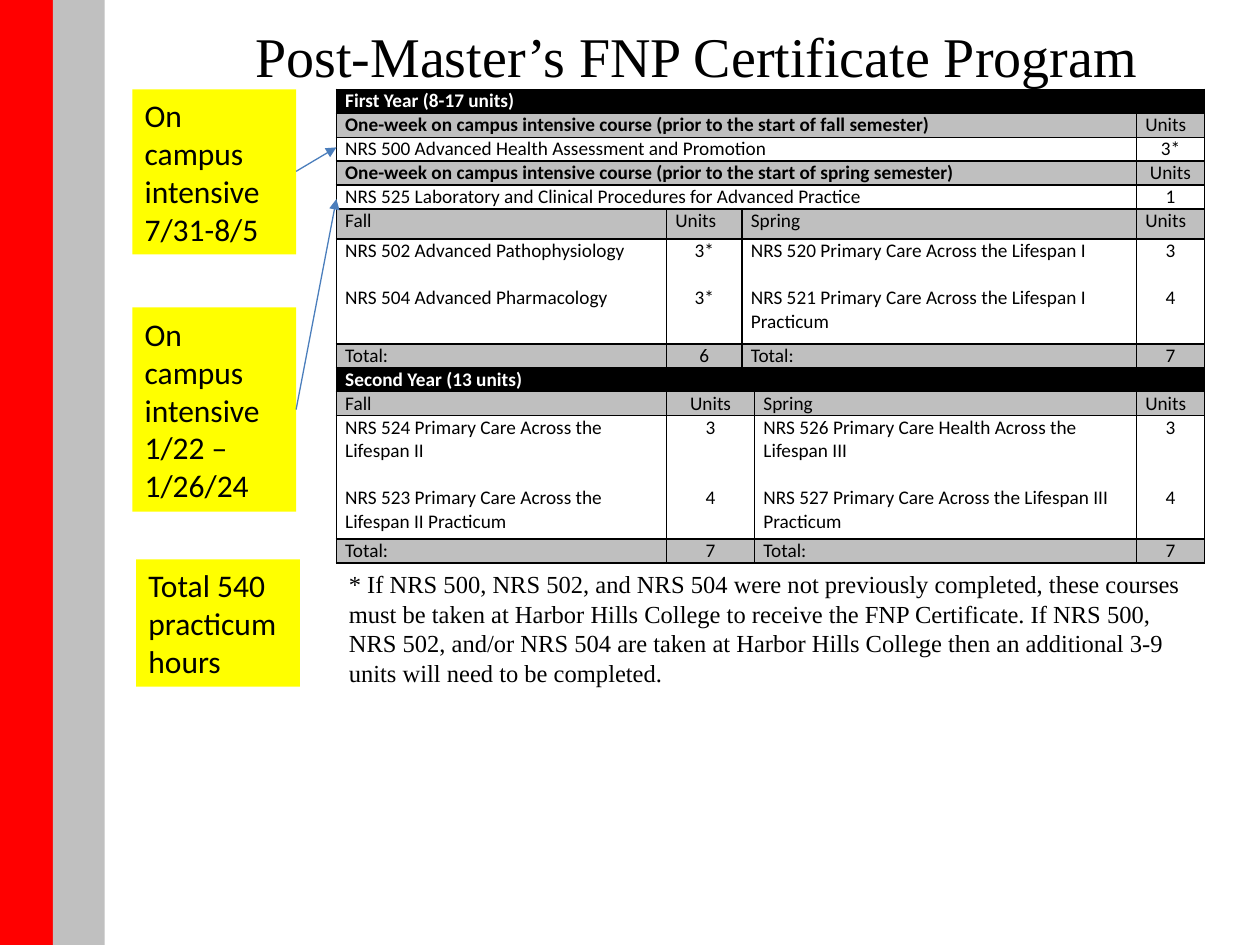
from lxml import etree
from pptx import Presentation
from pptx.dml.color import RGBColor
from pptx.enum.shapes import MSO_CONNECTOR, MSO_SHAPE
from pptx.enum.text import MSO_ANCHOR, PP_ALIGN
from pptx.oxml import parse_xml
from pptx.oxml.ns import nsdecls, qn
from pptx.util import Inches, Pt

RED = RGBColor(0xFF, 0x00, 0x00)
SILVER = RGBColor(0xC0, 0xC0, 0xC0)
YELLOW = RGBColor(0xFF, 0xFF, 0x00)
BLACK = RGBColor(0x00, 0x00, 0x00)
WHITE = RGBColor(0xFF, 0xFF, 0xFF)
GRAY = RGBColor(0xBF, 0xBF, 0xBF)
BLUE = RGBColor(0x4B, 0x7E, 0xBC)
LEFT, CENTER = PP_ALIGN.LEFT, PP_ALIGN.CENTER
LINE = 13.4  # height of one table text line in points


def format_text(frame, size, font, color, align=LEFT, bold=False):
    for paragraph in frame.paragraphs:
        paragraph.alignment = align
        for run in paragraph.runs:
            run.font.size = Pt(size)
            run.font.name = font
            run.font.bold = bold
            run.font.color.rgb = color


def add_block(left, top, width, height, color):
    block = slide.shapes.add_shape(
        MSO_SHAPE.RECTANGLE, Inches(left), Inches(top), Inches(width), Inches(height))
    block.shadow.inherit = False
    block.fill.solid()
    block.fill.fore_color.rgb = color
    block.line.fill.background()
    return block


prs = Presentation()
prs.slide_width, prs.slide_height = Inches(10), Inches(7.5)
slide = prs.slides.add_slide(prs.slide_layouts[5])

# Side stripes
add_block(0, 0, 0.42, 7.5, RED)
add_block(0.42, 0, 0.41, 7.5, SILVER)

# Title
title = slide.shapes.title
title.left, title.top = Inches(1.83), Inches(0.17)
title.width, title.height = Inches(7.4), Inches(0.54)
title_frame = title.text_frame
title_frame.text = "Post-Master’s FNP Certificate Program"
title_frame.margin_left = title_frame.margin_right = 0
title_frame.margin_top = title_frame.margin_bottom = 0
format_text(title_frame, 32, "Times New Roman", BLACK, CENTER)

# Yellow callouts
callouts = [
    (1.05, 0.71, 1.31, "On campus intensive 7/31-8/5"),
    (1.05, 2.44, 1.62, "On campus intensive 1/22 – 1/26/24"),
    (1.08, 4.44, 1.01, "Total 540 practicum hours"),
]
for left, top, height, words in callouts:
    callout = add_block(left, top, 1.3, height, YELLOW)
    callout.text_frame.word_wrap = True
    callout.text_frame.text = words
    format_text(callout.text_frame, 18, "Calibri", BLACK)

# Curriculum rows: height, fill, bold, then cells of
# (first column, last column, text, alignment, lines skipped between courses)
curriculum = [
    (0.19, BLACK, True, [(0, 4, "First Year (8-17 units)", LEFT, 0)]),
    (0.19, GRAY, True, [
        (0, 3, "One-week on campus intensive course (prior to the start of fall semester)", LEFT, 0),
        (4, 4, "Units", LEFT, 0)]),
    (0.19, WHITE, False, [
        (0, 3, "NRS 500 Advanced Health Assessment and Promotion", LEFT, 0),
        (4, 4, "3*", CENTER, 0)]),
    (0.19, GRAY, True, [
        (0, 3, "One-week on campus intensive course (prior to the start of spring semester)", LEFT, 0),
        (4, 4, "Units", CENTER, 0)]),
    (0.19, WHITE, False, [
        (0, 3, "NRS 525 Laboratory and Clinical Procedures for Advanced Practice", LEFT, 0),
        (4, 4, "1", CENTER, 0)]),
    (0.24, GRAY, False, [
        (0, 0, "Fall", LEFT, 0), (1, 1, "Units", LEFT, 0),
        (2, 3, "Spring", LEFT, 0), (4, 4, "Units", LEFT, 0)]),
    (0.83, WHITE, False, [
        (0, 0, "NRS 502 Advanced Pathophysiology\nNRS 504 Advanced Pharmacology", LEFT, 1),
        (1, 1, "3*\n3*", CENTER, 1),
        (2, 3, "NRS 520 Primary Care Across the Lifespan I\n"
               "NRS 521 Primary Care Across the Lifespan I Practicum", LEFT, 1),
        (4, 4, "3\n4", CENTER, 1)]),
    (0.19, GRAY, False, [
        (0, 0, "Total:", LEFT, 0), (1, 1, "6", CENTER, 0),
        (2, 3, "Total:", LEFT, 0), (4, 4, "7", CENTER, 0)]),
    (0.19, BLACK, True, [(0, 4, "Second Year (13 units)", LEFT, 0)]),
    (0.19, GRAY, False, [
        (0, 0, "Fall", LEFT, 0), (1, 2, "Units", CENTER, 0),
        (3, 3, "Spring", LEFT, 0), (4, 4, "Units", LEFT, 0)]),
    (0.98, WHITE, False, [
        (0, 0, "NRS 524 Primary Care Across the Lifespan II\n"
               "NRS 523 Primary Care Across the Lifespan II Practicum", LEFT, 1),
        (1, 2, "3\n4", CENTER, 2),
        (3, 3, "NRS 526 Primary Care Health Across the Lifespan III\n"
               "NRS 527 Primary Care Across the Lifespan III Practicum", LEFT, 1),
        (4, 4, "3\n4", CENTER, 2)]),
    (0.19, GRAY, False, [
        (0, 0, "Total:", LEFT, 0), (1, 2, "7", CENTER, 0),
        (3, 3, "Total:", LEFT, 0), (4, 4, "7", CENTER, 0)]),
]

# Curriculum table
column_widths = [2.62, 0.6, 0.1, 3.03, 0.54]
table = slide.shapes.add_table(
    len(curriculum), len(column_widths),
    Inches(2.67), Inches(0.71), Inches(6.89), Inches(3.77)).table
table.first_row = table.horz_banding = False
for column, width in zip(table.columns, column_widths):
    column.width = Inches(width)

for row, (height, fill, bold, entries) in enumerate(curriculum):
    table.rows[row].height = Inches(height)
    for first, last, words, align, skipped in entries:
        cell = table.cell(row, first)
        if last > first:
            cell.merge(table.cell(row, last))
        cell.text_frame.text = words
        text_color = WHITE if fill == BLACK else BLACK
        format_text(cell.text_frame, 11, "Calibri", text_color, align,
                    bold and words != "Units")
        for paragraph in cell.text_frame.paragraphs[1:]:
            paragraph.space_before = Pt(skipped * LINE)

    # Fill, margins and black borders
    for cell in table.rows[row].cells:
        cell.fill.solid()
        cell.fill.fore_color.rgb = fill
        cell.margin_left = cell.margin_right = Inches(0.07)
        cell.margin_top = cell.margin_bottom = 0
        cell.vertical_anchor = MSO_ANCHOR.TOP
        for position, side in enumerate(["lnL", "lnR", "lnT", "lnB"]):
            border = parse_xml(
                f'<a:{side} {nsdecls("a")} w="12700"><a:solidFill>'
                f'<a:srgbClr val="{BLACK}"/></a:solidFill></a:{side}>')
            cell._tc.get_or_add_tcPr().insert(position, border)

# Footnote
footnote = slide.shapes.add_textbox(
    Inches(2.67), Inches(4.47), Inches(6.89), Inches(1.04)).text_frame
footnote.word_wrap = True
footnote.text = (
    "* If NRS 500, NRS 502, and NRS 504 were not previously completed, these courses "
    "must be taken at Harbor Hills College to receive the FNP Certificate. If NRS 500, "
    "NRS 502, and/or NRS 504 are taken at Harbor Hills College then an additional 3-9 "
    "units will need to be completed.")
format_text(footnote, 14, "Times New Roman", BLACK)

# Arrows from the callouts to the intensive courses
for start_y, end_y in [(1.36, 1.17), (3.25, 1.58)]:
    arrow = slide.shapes.add_connector(
        MSO_CONNECTOR.STRAIGHT, Inches(2.35), Inches(start_y), Inches(2.67), Inches(end_y))
    arrow.line.color.rgb = BLUE
    arrow.line.width = Pt(0.75)
    etree.SubElement(arrow.line._get_or_add_ln(), qn("a:tailEnd"), type="triangle")
    etree.SubElement(arrow._element.spPr, qn("a:effectLst"))

prs.save("out.pptx")
